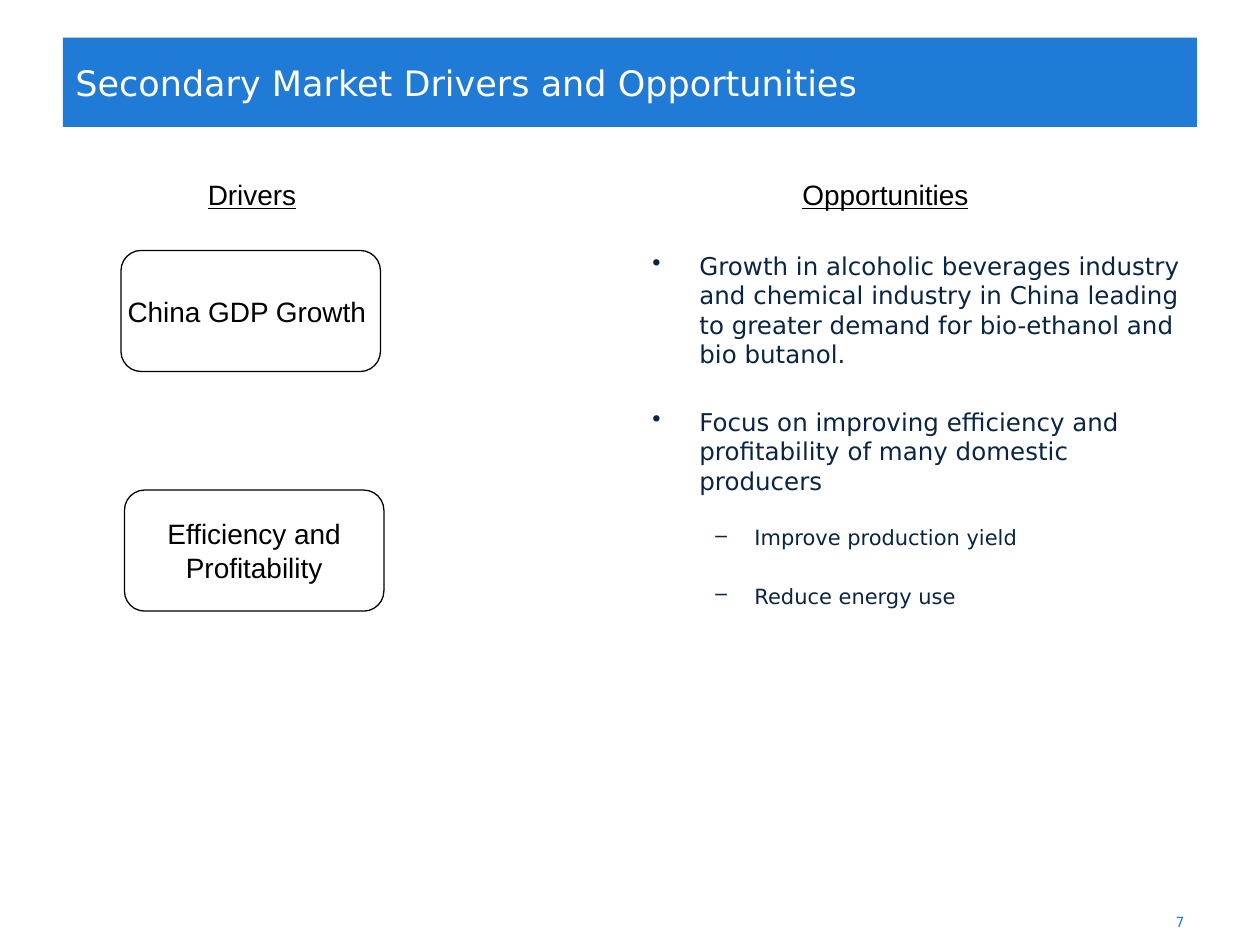
"""Build a slide that sets market drivers beside their opportunities."""
import pptx
import pptx.dml.color
import pptx.enum.shapes
import pptx.enum.text
import pptx.oxml.ns
import pptx.util
from lxml import etree

Cm = pptx.util.Cm
Pt = pptx.util.Pt
Align = pptx.enum.text.PP_ALIGN
Anchor = pptx.enum.text.MSO_ANCHOR
Shape = pptx.enum.shapes.MSO_SHAPE

BLUE = pptx.dml.color.RGBColor(0x1F, 0x7B, 0xD6)
NAVY = pptx.dml.color.RGBColor(0x09, 0x25, 0x43)
BLACK = pptx.dml.color.RGBColor(0, 0, 0)
WHITE = pptx.dml.color.RGBColor(0xFF, 0xFF, 0xFF)

TITLE_FONT = {"name": "DejaVu Sans", "size": Pt(20), "color": WHITE}
NUMBER_FONT = {"name": "DejaVu Sans", "size": Pt(8), "color": BLUE}
DRIVER_FONT = {"name": "Arial", "size": Pt(16), "color": BLACK}
HEADING_FONT = {**DRIVER_FONT, "underline": True}
LEVELS = [
    {"bullet": "•", "margin": Cm(0.95), "hanging": Cm(0.95),
     "font": {"name": "DejaVu Sans", "size": Pt(14), "color": NAVY}},
    {"bullet": "–", "margin": Cm(2.06), "hanging": Cm(0.79),
     "font": {"name": "DejaVu Sans", "size": Pt(12), "color": NAVY}},
]
OPPORTUNITIES = [
    (0, 0, "Growth in alcoholic beverages industry and chemical industry in China "
           "leading to greater demand for bio-ethanol and bio butanol."),
    (0, 22, "Focus on improving efficiency and profitability of many domestic producers"),
    (1, 17, "Improve production yield"),
    (1, 19, "Reduce energy use"),
]


def format_font(font, values):
    for attribute, value in values.items():
        if attribute == "color":
            font.color.rgb = value
        else:
            setattr(font, attribute, value)


def write_line(shape, text, font_values, alignment, anchor, wrap=True):
    frame = shape.text_frame
    frame.word_wrap = wrap
    frame.vertical_anchor = anchor
    paragraph = frame.paragraphs[0]
    paragraph.text = text
    paragraph.alignment = alignment
    format_font(paragraph.font, font_values)


def add_text(slide, box, text, font_values, alignment, anchor):
    shape = slide.shapes.add_textbox(*map(Cm, box))
    write_line(shape, text, font_values, alignment, anchor)


def add_title(slide, box, text):
    shape = slide.shapes.add_shape(Shape.RECTANGLE, *map(Cm, box))
    shape.shadow.inherit = False
    shape.fill.solid()
    shape.fill.fore_color.rgb = BLUE
    shape.line.fill.background()
    write_line(shape, text, TITLE_FONT, Align.LEFT, Anchor.MIDDLE)


def add_driver(slide, left, top, text, wrap):
    shape = slide.shapes.add_shape(
        Shape.ROUNDED_RECTANGLE, Cm(left), Cm(top), Cm(5.23), Cm(2.44))
    shape.shadow.inherit = False
    shape.fill.background()
    shape.line.color.rgb = BLACK
    shape.line.width = Pt(0.75)
    write_line(shape, text, DRIVER_FONT, Align.CENTER, Anchor.MIDDLE, wrap)


def add_bullet(paragraph, level):
    properties = paragraph._p.get_or_add_pPr()
    properties.set("marL", str(level["margin"]))
    properties.set("indent", str(-level["hanging"]))
    bullet = etree.SubElement(properties, pptx.oxml.ns.qn("a:buChar"))
    bullet.set("char", level["bullet"])


def add_bullet_list(slide, box, items):
    frame = slide.shapes.add_textbox(*map(Cm, box)).text_frame
    frame.word_wrap = True
    for index, (depth, space, text) in enumerate(items):
        paragraph = frame.add_paragraph() if index else frame.paragraphs[0]
        paragraph.text = text
        paragraph.level = depth
        add_bullet(paragraph, LEVELS[depth])
        paragraph.space_before = Pt(space)
        format_font(paragraph.font, LEVELS[depth]["font"])


def main():
    presentation = pptx.Presentation()
    presentation.slide_width = Cm(25.4)
    presentation.slide_height = Cm(19.05)
    slide = presentation.slides.add_slide(presentation.slide_layouts[6])

    add_text(slide, (18.21, 18.08, 5.92, 1.02), "7", NUMBER_FONT, Align.RIGHT, Anchor.MIDDLE)
    add_title(slide, (1.27, 0.76, 22.86, 1.8), "Secondary Market Drivers and Opportunities")
    add_bullet_list(slide, (12.9, 4.93, 11.23, 6.6), OPPORTUNITIES)
    add_driver(slide, 2.44, 5.05, "China GDP Growth ", False)
    add_driver(slide, 2.51, 9.88, "Efficiency and Profitability", True)
    for left, heading in ((2.44, "Drivers"), (15.21, "Opportunities")):
        add_text(slide, (left, 3.45, 5.28, 0.94), heading, HEADING_FONT,
                 Align.CENTER, Anchor.TOP)

    presentation.save("out.pptx")


if __name__ == "__main__":
    main()
